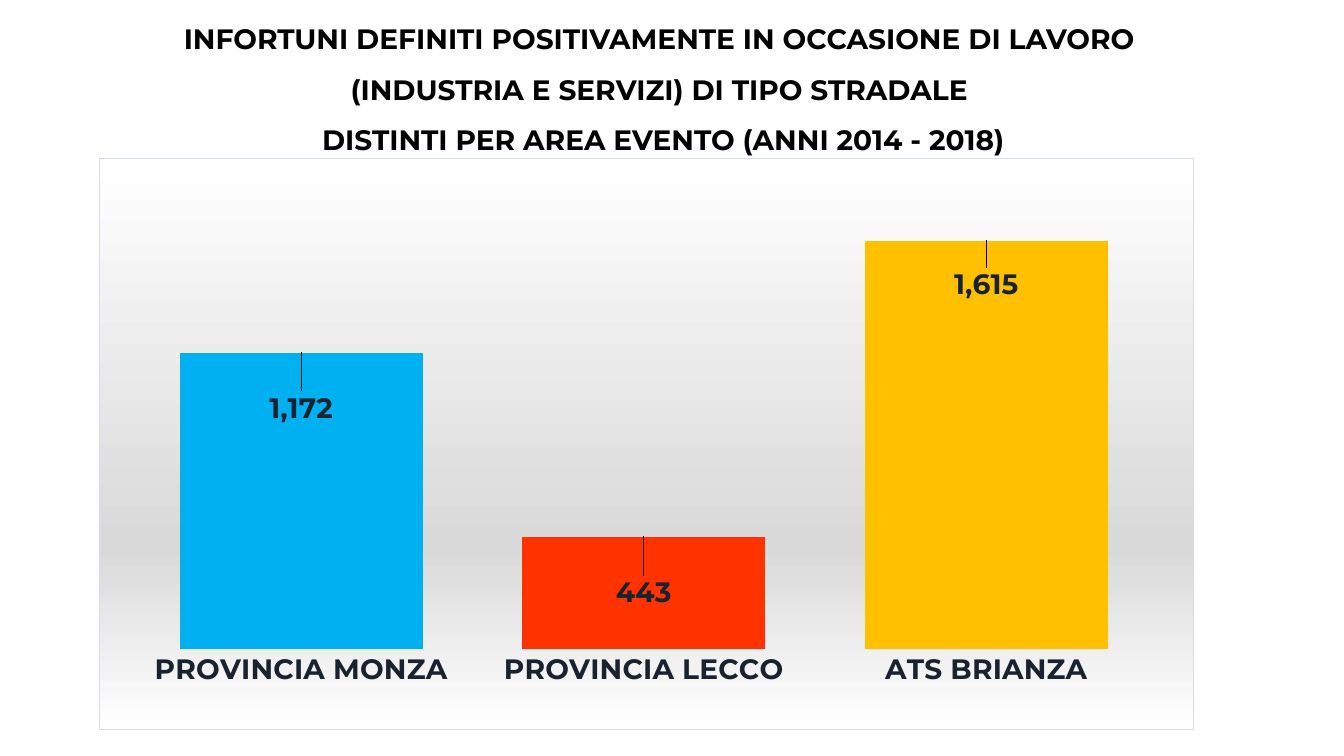
from lxml import etree
from pptx import Presentation
from pptx.chart.data import CategoryChartData
from pptx.dml.color import RGBColor
from pptx.enum.chart import XL_CHART_TYPE as ChartType, XL_LABEL_POSITION as LabelPos, XL_TICK_MARK as Tick
from pptx.enum.text import MSO_ANCHOR, MSO_AUTO_SIZE, PP_ALIGN
from pptx.oxml import parse_xml
from pptx.oxml.ns import nsdecls, qn
from pptx.util import Cm, Pt

TITLE = [
    "INFORTUNI DEFINITI POSITIVAMENTE IN OCCASIONE DI LAVORO ",
    "(INDUSTRIA E SERVIZI) DI TIPO STRADALE ",
    "DISTINTI PER AREA EVENTO (ANNI 2014 - 2018)",
]
AREAS = [
    {"name": "PROVINCIA MONZA", "value": 1172, "color": "00B0F0", "shift": (0, 0.06)},
    {"name": "PROVINCIA LECCO", "value": 443, "color": "FF3300", "shift": (0, 0.06)},
    {"name": "ATS BRIANZA", "value": 1615, "color": "FFC000", "shift": (0, 0.04)},
]
TITLE_BOX = (0, 0, 33.43, 1.8)
CHART_BOX = (2.49, 3.99, 27.61, 14.4)
PLOT_AREA = {"x": 0.028, "y": 0.062, "w": 0.939, "h": 0.797}
NUMBER_FORMAT = "#,##0"


class Theme:
    title = "000000"
    text = "19232F"
    border = "D4DDE8"
    gradient = [(0, "FFFFFF"), (68, "D9D9D9"), (100, "FFFFFF")]
    heading = {"name": "Montserrat", "size": Pt(20), "bold": True}
    base = {"name": "Arial", "size": Pt(10)}


def set_attrs(obj, values):
    for key, value in values.items():
        setattr(obj, key, value)


def set_font(font, values, color):
    set_attrs(font, values)
    font.color.rgb = RGBColor.from_string(color)


def add_title(s):
    sp = s.shapes.title
    set_attrs(sp, dict(zip(("left", "top", "width", "height"), map(Cm, TITLE_BOX))))
    tf = sp.text_frame
    set_attrs(tf, {"word_wrap": True, "auto_size": MSO_AUTO_SIZE.NONE,
                   "vertical_anchor": MSO_ANCHOR.TOP})
    for i, line in enumerate(TITLE):
        p = tf.add_paragraph() if i else tf.paragraphs[0]
        set_attrs(p, {"alignment": PP_ALIGN.CENTER, "line_spacing": 1.5,
                      "space_before": Pt(0)})
        r = p.add_run()
        r.text = line
        set_font(r.font, Theme.heading, Theme.title)


def manual_layout(values):
    layout = etree.Element(qn("c:layout"))
    manual = etree.SubElement(layout, qn("c:manualLayout"))
    for key, value in values.items():
        etree.SubElement(manual, qn(f"c:{key}")).set("val", str(value))
    return layout


def style_background(chart):
    stops = "".join(f'<a:gs pos="{pos * 1000}"><a:srgbClr val="{color}"/></a:gs>'
                    for pos, color in Theme.gradient)
    sp_pr = parse_xml(
        f'<c:spPr {nsdecls("c", "a")}><a:gradFill><a:gsLst>{stops}</a:gsLst>'
        f'<a:lin ang="5400000" scaled="0"/></a:gradFill><a:ln w="9525"><a:solidFill>'
        f'<a:srgbClr val="{Theme.border}"/></a:solidFill></a:ln></c:spPr>')
    chart.element.find(qn("c:chart")).addnext(sp_pr)


def add_chart(s):
    data = CategoryChartData(number_format=NUMBER_FORMAT)
    data.categories = [area["name"] for area in AREAS]
    data.add_series("Series 1", [area["value"] for area in AREAS])
    chart = s.shapes.add_chart(ChartType.COLUMN_CLUSTERED, *map(Cm, CHART_BOX), data).chart
    set_attrs(chart, {"has_legend": False, "has_title": False})
    set_font(chart.font, Theme.base, Theme.text)
    style_background(chart)

    set_attrs(chart.value_axis, {"visible": False, "has_major_gridlines": False,
                                 "minimum_scale": 0, "maximum_scale": 1800})
    axis = chart.category_axis
    set_attrs(axis, {"major_tick_mark": Tick.NONE, "minor_tick_mark": Tick.NONE})
    axis.format.line.fill.background()
    set_font(axis.tick_labels.font, Theme.heading, Theme.text)

    plot = chart.plots[0]
    set_attrs(plot, {"gap_width": 41, "vary_by_categories": False})
    series = plot.series[0]
    series.format.fill.solid()
    series.format.fill.fore_color.rgb = RGBColor.from_string(AREAS[0]["color"])
    labels = series.data_labels
    set_attrs(labels, {"show_value": True, "position": LabelPos.INSIDE_END,
                       "number_format": NUMBER_FORMAT, "number_format_is_linked": False})
    set_font(labels.font, Theme.heading, Theme.text)
    for i, area in enumerate(AREAS):
        point = series.points[i]
        point.format.fill.solid()
        point.format.fill.fore_color.rgb = RGBColor.from_string(area["color"])
        point.data_label.position = LabelPos.INSIDE_END
        set_font(point.data_label.font, Theme.heading, Theme.text)

    for idx, area in zip(chart.element.xpath(".//c:dLbl/c:idx"), AREAS):
        idx.addnext(manual_layout(dict(zip("xy", area["shift"]))))
    plot_area = chart.element.xpath(".//c:plotArea")[0]
    for old in plot_area.findall(qn("c:layout")):
        plot_area.remove(old)
    modes = {"layoutTarget": "inner", "xMode": "edge", "yMode": "edge"}
    plot_area.insert(0, manual_layout({**modes, **PLOT_AREA}))


def main():
    prs = Presentation()
    set_attrs(prs, {"slide_width": Cm(33.87), "slide_height": Cm(19.05)})
    s = prs.slides.add_slide(prs.slide_layouts[5])
    add_title(s)
    add_chart(s)
    prs.save("out.pptx")


if __name__ == "__main__":
    main()
